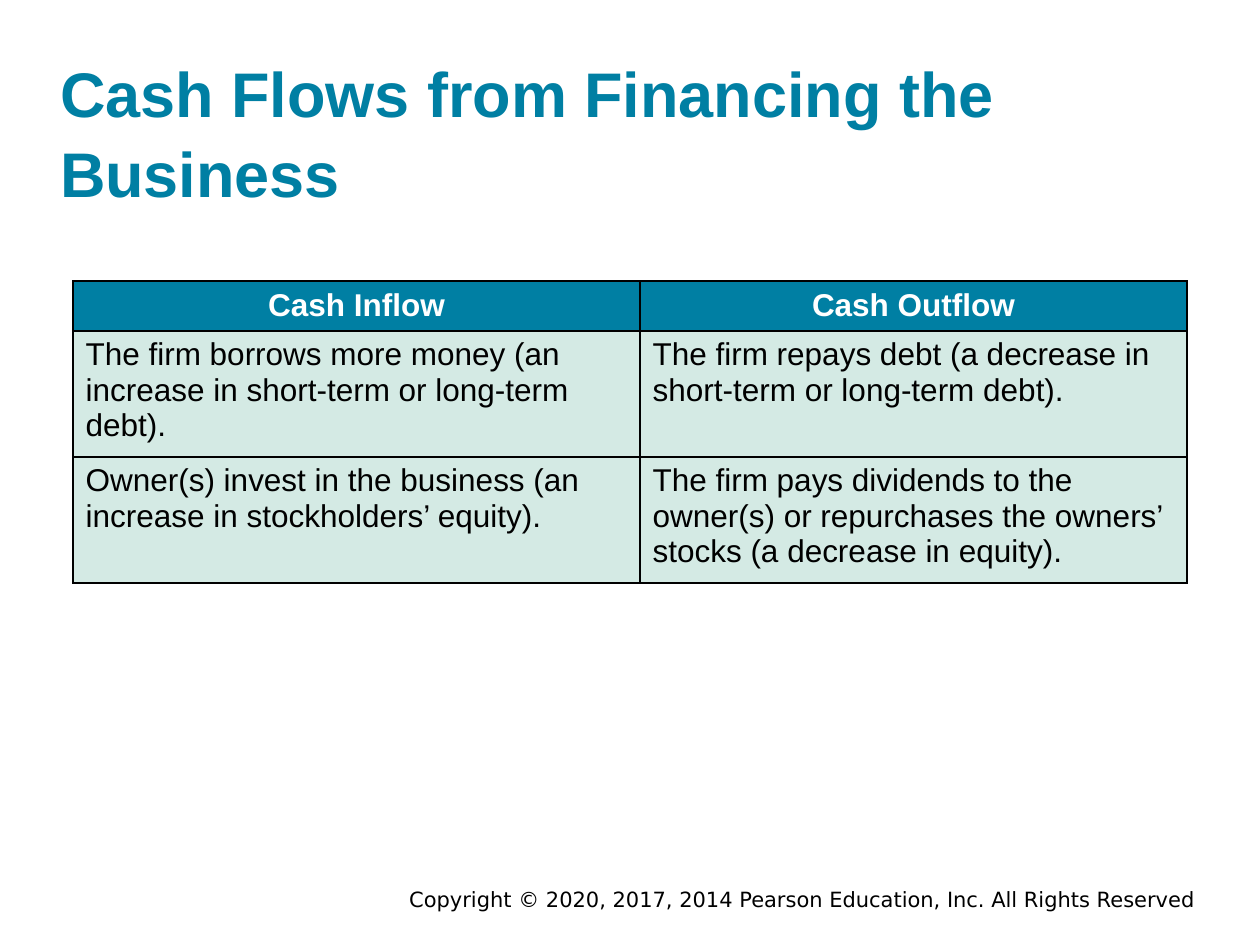
import pptx
import pptx.dml.color
import pptx.enum.text
import pptx.oxml
import pptx.oxml.ns
import pptx.util
from dataclasses import dataclass


@dataclass(frozen=True)
class Theme:
    teal: str = "007FA3"
    mint: str = "D4EAE4"
    white: str = "FFFFFF"
    black: str = "000000"
    font: str = "Arial"
    footer_font: str = "DejaVu Sans"
    title_size: int = 36
    table_size: int = 18
    footer_size: int = 12


theme = Theme()
PX = pptx.util.Inches(1) / 126
ALIGN = pptx.enum.text.PP_ALIGN
ANCHOR = pptx.enum.text.MSO_ANCHOR


def add_run(paragraph, text, size, color, bold=False, font=theme.font):
    run = paragraph.add_run()
    run.text = text
    run.font.name = font
    run.font.size = pptx.util.Pt(size)
    run.font.bold = bold
    run.font.color.rgb = pptx.dml.color.RGBColor.from_string(color)


def add_borders(cell):
    """Draw a 1 pt black line on all four sides; call before filling the cell."""
    properties = cell._tc.get_or_add_tcPr()
    for side in ("lnL", "lnR", "lnT", "lnB"):
        properties.append(pptx.oxml.parse_xml(
            f'<a:{side} {pptx.oxml.ns.nsdecls("a")} w="{pptx.util.Pt(1)}">'
            f'<a:solidFill><a:srgbClr val="{theme.black}"/></a:solidFill></a:{side}>'))


presentation = pptx.Presentation()
presentation.slide_width = pptx.util.Inches(10)
presentation.slide_height = pptx.util.Inches(7.5)
slide = presentation.slides.add_slide(presentation.slide_layouts[5])

# Title
title = slide.shapes.title
title.left, title.top, title.width, title.height = [round(n * PX) for n in (60, 59, 1126, 151)]
frame = title.text_frame
frame.margin_left = frame.margin_right = frame.margin_top = frame.margin_bottom = 0
frame.auto_size = pptx.enum.text.MSO_AUTO_SIZE.NONE
frame.vertical_anchor = ANCHOR.BOTTOM
frame.word_wrap = True
paragraph = frame.paragraphs[0]
paragraph.alignment = ALIGN.LEFT
paragraph.line_spacing = 1.05
add_run(paragraph, "Cash Flows from Financing the Business", theme.title_size, theme.teal, bold=True)

# Cash flow table: each cell is a list of paragraphs
rows = [
    [["Cash Inflow"], ["Cash Outflow"]],
    [["The firm borrows more money (an increase in short-term or long-term debt)."],
     ["The firm repays debt (a decrease in", "short-term or long-term debt)."]],
    [["Owner(s) invest in the business (an increase in stockholders’ equity)."],
     ["The firm pays dividends to the owner(s) or repurchases the owners’ stocks (a decrease in equity)."]],
]
column_widths = [567, 547]
row_heights = [50, 126, 126]
table_box = [round(n * PX) for n in (73, 281, sum(column_widths), sum(row_heights))]
table = slide.shapes.add_table(len(rows), len(column_widths), *table_box).table
for column, width in zip(table.columns, column_widths):
    column.width = round(width * PX)
for row, height in zip(table.rows, row_heights):
    row.height = round(height * PX)

for row_index, row in enumerate(rows):
    is_header = row_index == 0
    for column_index, texts in enumerate(row):
        cell = table.cell(row_index, column_index)
        add_borders(cell)
        cell.fill.solid()
        cell.fill.fore_color.rgb = pptx.dml.color.RGBColor.from_string(
            theme.teal if is_header else theme.mint)
        cell.vertical_anchor = ANCHOR.MIDDLE if is_header else ANCHOR.TOP
        for text_index, text in enumerate(texts):
            frame = cell.text_frame
            paragraph = frame.add_paragraph() if text_index else frame.paragraphs[0]
            paragraph.alignment = ALIGN.CENTER if is_header else ALIGN.LEFT
            add_run(paragraph, text, theme.table_size,
                    theme.white if is_header else theme.black, bold=is_header)

# Copyright line
footer = slide.shapes.add_textbox(*[round(n * PX) for n in (222, 880, 986, 38)])
footer.text_frame.word_wrap = True
paragraph = footer.text_frame.paragraphs[0]
paragraph.alignment = ALIGN.RIGHT
add_run(paragraph, "Copyright © 2020, 2017, 2014 Pearson Education, Inc. All Rights Reserved",
        theme.footer_size, theme.black, font=theme.footer_font)

presentation.save("out.pptx")
